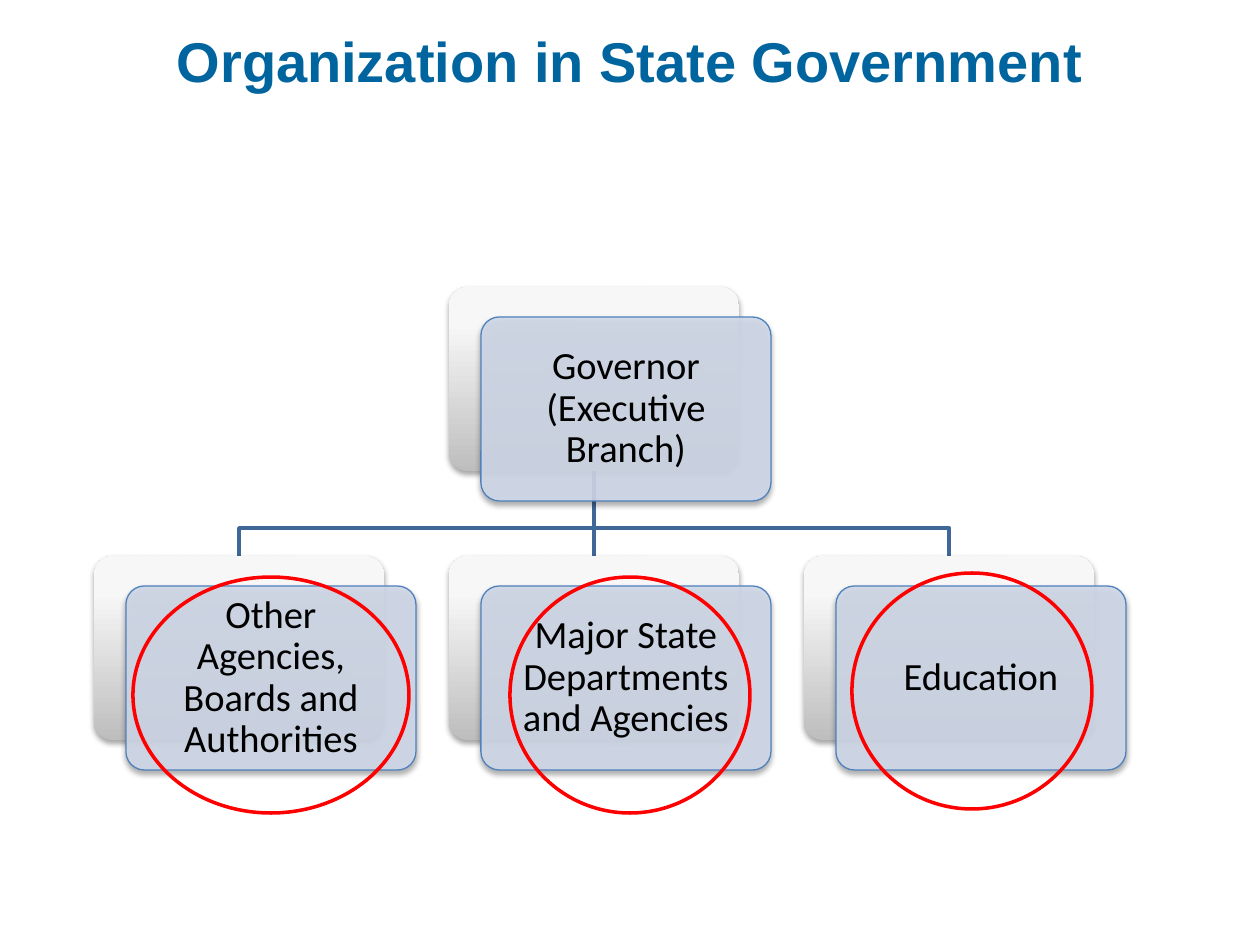
from lxml.etree import SubElement
from pptx import Presentation
from pptx.dml.color import RGBColor
from pptx.enum.shapes import MSO_CONNECTOR, MSO_SHAPE
from pptx.enum.text import MSO_ANCHOR, MSO_AUTO_SIZE, PP_ALIGN
from pptx.oxml.ns import qn
from pptx.util import Inches, Pt

EMU_PER_PX = Inches(1) / 126
COLORS = {
    "title": "00649F", "text": "000000", "branch": "3F6797",
    "card": "D0D8E8", "card_line": "4F81BD",
    "back_bottom": "BEBEBE", "back_top": "F7F7F7",
    "ring": "FF0000", "shadow": "000000",
}
CARD_WIDTH, CARD_HEIGHT = 290, 184
CARD_OFFSET = (32, 30)
COLUMNS = [94 + 355 * index for index in range(3)]
GOVERNOR_TOP, UNIT_TOP, BUS_Y = 287, 556, 528
UNITS = [
    "Other Agencies, Boards and Authorities",
    "Major State Departments and Agencies",
    "Education",
]
RINGS = [(133, 577, 276, 236), (510, 577, 240, 236), (852, 573, 240, 236)]


def px(value):
    return round(value * EMU_PER_PX)


def color(name):
    return RGBColor.from_string(COLORS[name])


def apply(target, values):
    for name, value in values.items():
        setattr(target, name, value)


class SlideBuilder:
    title_font = {"name": "Arial", "size": Pt(32), "bold": True}
    card_font = {"name": "Calibri", "size": Pt(22), "bold": False}

    def __init__(self, slide):
        self.slide = slide
        self.shapes = slide.shapes

    def label(self, shape, text, font, color_name, frame_format, line_spacing=1.0):
        frame = shape.text_frame
        apply(frame, {"word_wrap": True, "auto_size": MSO_AUTO_SIZE.NONE, **frame_format})
        paragraph = frame.paragraphs[0]
        paragraph.text = text
        apply(paragraph, {"alignment": PP_ALIGN.CENTER, "line_spacing": line_spacing})
        apply(paragraph.font, font)
        paragraph.font.color.rgb = color(color_name)

    def title(self, text, left, top, width, height):
        title = self.shapes.title
        apply(title, {"left": px(left), "top": px(top),
                      "width": px(width), "height": px(height)})
        self.label(title, text, self.title_font, "title", {
            "vertical_anchor": MSO_ANCHOR.TOP, "margin_top": px(6),
            "margin_left": 0, "margin_right": 0, "margin_bottom": 0})

    def outline(self, shape, color_name, width):
        shape.line.color.rgb = color(color_name)
        shape.line.width = Pt(width)

    def drop_shadow(self, shape):
        effects = shape.element.spPr.find(qn("a:effectLst"))
        shadow = SubElement(effects, qn("a:outerShdw"), blurRad=str(Pt(3.1)),
                            dist=str(Pt(1.8)), dir="5400000", rotWithShape="0")
        tint = SubElement(shadow, qn("a:srgbClr"), val=COLORS["shadow"])
        SubElement(tint, qn("a:alpha"), val="35000")

    def preset(self, kind, left, top, width, height):
        shape = self.shapes.add_shape(kind, px(left), px(top), px(width), px(height))
        shape.shadow.inherit = False
        return shape

    def rounded(self, left, top):
        shape = self.preset(MSO_SHAPE.ROUNDED_RECTANGLE, left, top, CARD_WIDTH, CARD_HEIGHT)
        shape.adjustments[0] = 0.1
        self.drop_shadow(shape)
        return shape

    def card(self, left, top, text):
        """Draw a grey back plate with a labelled card over it; return the plate."""
        back = self.rounded(left, top)
        back.line.fill.background()
        back.fill.gradient()
        back.fill.gradient_angle = 90
        stops = back.fill.gradient_stops
        for stop, position, name in zip(stops, (0, 0.8), ("back_bottom", "back_top")):
            stop.position = position
            stop.color.rgb = color(name)

        front = self.rounded(left + CARD_OFFSET[0], top + CARD_OFFSET[1])
        front.fill.solid()
        front.fill.fore_color.rgb = color("card")
        tint = front.element.spPr.find(qn("a:solidFill")).find(qn("a:srgbClr"))
        SubElement(tint, qn("a:alpha"), val="90000")
        self.outline(front, "card_line", 0.75)
        self.label(front, text, self.card_font, "text", {
            "vertical_anchor": MSO_ANCHOR.MIDDLE, "margin_left": px(17),
            "margin_right": px(17), "margin_top": px(11), "margin_bottom": px(11)}, 0.9)
        return back

    def branch(self, points):
        builder = self.shapes.build_freeform(*points[0], scale=EMU_PER_PX)
        builder.add_line_segments(points[1:], close=False)
        shape = builder.convert_to_shape()
        shape.shadow.inherit = False
        shape.fill.background()
        self.outline(shape, "branch", 2)

    def trunk(self, upper, lower):
        """Join two plates by a straight line kept behind every card."""
        line = self.shapes.add_connector(MSO_CONNECTOR.STRAIGHT, 0, 0, 0, 0)
        line.begin_connect(upper, 2)
        line.end_connect(lower, 0)
        self.outline(line, "branch", 2)
        SubElement(line.element.spPr, qn("a:effectLst"))
        self.shapes.title.element.addnext(line.element)

    def ring(self, left, top, width, height):
        shape = self.preset(MSO_SHAPE.OVAL, left, top, width, height)
        shape.fill.background()
        self.outline(shape, "ring", 2)


def main():
    presentation = Presentation()
    presentation.slide_width, presentation.slide_height = Inches(10), Inches(7.5)
    builder = SlideBuilder(presentation.slides.add_slide(presentation.slide_layouts[5]))
    builder.title("Organization in State Government", 97, 21, 1066, 87)

    left_x, center_x, right_x = [left + CARD_WIDTH // 2 for left in COLUMNS]
    for end_x in (left_x, right_x):
        builder.branch([(center_x, GOVERNOR_TOP + CARD_HEIGHT), (center_x, BUS_Y),
                        (end_x, BUS_Y), (end_x, UNIT_TOP)])

    governor = builder.card(COLUMNS[1], GOVERNOR_TOP, "Governor (Executive Branch)")
    units = [builder.card(left, UNIT_TOP, text) for left, text in zip(COLUMNS, UNITS)]
    builder.trunk(governor, units[1])
    for ring in RINGS:
        builder.ring(*ring)
    presentation.save("out.pptx")


if __name__ == "__main__":
    main()
